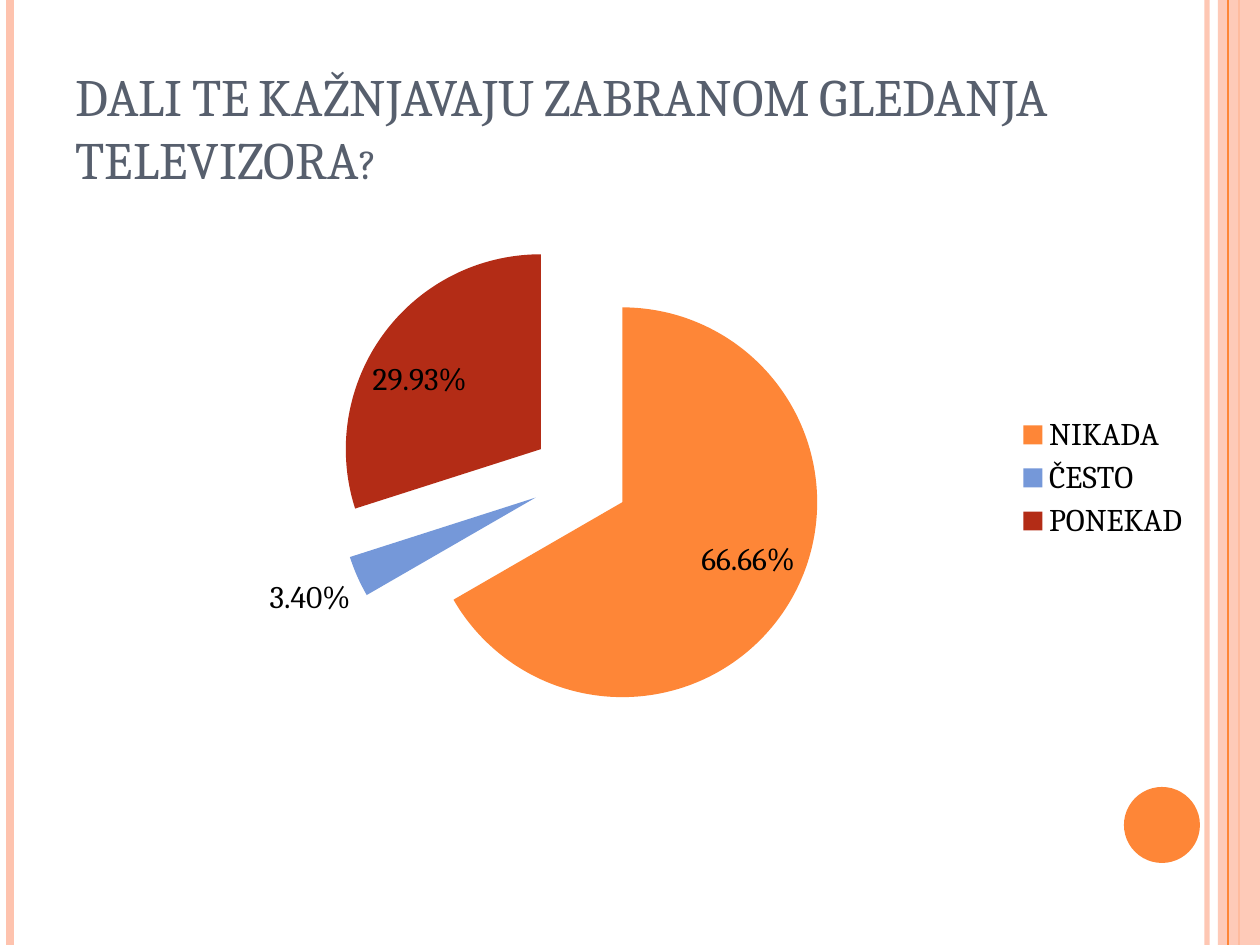
from lxml import etree
from pptx import Presentation
from pptx import util as u
from pptx.chart.data import CategoryChartData
from pptx.dml.color import RGBColor
from pptx.enum import chart as ch, shapes, text
from pptx.oxml.ns import qn

EMU_PER_PX = 914400 / 126
WIDTH, HEIGHT = 1260, 945
FONT = "Cambria"
ORANGE = RGBColor(0xFE, 0x86, 0x37)
PEACH = RGBColor(0xFE, 0xC3, 0xAE)
BLUE = RGBColor(0x75, 0x98, 0xD9)
RED = RGBColor(0xB3, 0x2C, 0x16)
SLATE = RGBColor(0x57, 0x5F, 0x6D)
BLACK = RGBColor(0, 0, 0)

TITLE = "DALI TE KAŽNJAVAJU ZABRANOM GLEDANJA TELEVIZORA?"
ANSWERS = [("NIKADA", 0.6666, ORANGE), ("ČESTO", 0.034, BLUE), ("PONEKAD", 0.2993, RED)]


def px(n):
    return u.Emu(round(n * EMU_PER_PX))


def box(*lengths):
    return [px(n) for n in lengths]


def set_all(obj, values):
    for name, value in values.items():
        setattr(obj, name, value)


def set_opacity(fill_parent, percent):
    color = fill_parent.find(".//" + qn("a:srgbClr"))
    etree.SubElement(color, qn("a:alpha"), val=str(percent * 1000))


def add_rule(s, x, color, width, opacity=100):
    """Add a vertical line over the full height of the slide."""
    line = s.shapes.add_connector(shapes.MSO_CONNECTOR.STRAIGHT, *box(x, 0, x, HEIGHT))
    line.line.color.rgb = color
    line.line.width = u.Pt(width)
    sp_pr = line._element.spPr
    if opacity < 100:
        set_opacity(sp_pr, opacity)
    etree.SubElement(sp_pr, qn("a:effectLst"))


def add_filled(s, kind, bounds, color, opacity=100):
    sp = s.shapes.add_shape(kind, *box(*bounds))
    sp.shadow.inherit = False
    sp.fill.solid()
    sp.fill.fore_color.rgb = color
    sp.line.fill.background()
    if opacity < 100:
        set_opacity(sp._element.spPr, opacity)


def set_title(s):
    sp = s.shapes.title
    left, top, width, height = box(63, 38, 1029, 158)
    set_all(sp, {"left": left, "top": top, "width": width, "height": height})
    tf = sp.text_frame
    set_all(tf, {"word_wrap": True, "auto_size": text.MSO_AUTO_SIZE.NONE,
                 "vertical_anchor": text.MSO_ANCHOR.BOTTOM})
    p = tf.paragraphs[0]
    p.alignment = text.PP_ALIGN.LEFT
    r = p.add_run()
    r.text = TITLE
    set_all(r.font, {"name": FONT, "size": u.Pt(30)})
    r.font.color.rgb = SLATE
    r.font._element.set("cap", "small")


def add_pie(s):
    data = CategoryChartData(number_format="0.00%")
    data.categories = [name for name, _, _ in ANSWERS]
    data.add_series("Series 1", [value for _, value, _ in ANSWERS])
    chart = s.shapes.add_chart(ch.XL_CHART_TYPE.PIE, *box(69, 217, 1134, 522), data).chart
    set_all(chart, {"has_title": False, "has_legend": True})
    set_all(chart.font, {"name": FONT, "size": u.Pt(18)})
    chart.font.color.rgb = BLACK
    set_all(chart.legend, {"position": ch.XL_LEGEND_POSITION.RIGHT,
                           "include_in_layout": False})

    plot = chart.plots[0]
    plot.vary_by_categories = True
    series = plot.series[0]
    explosion = etree.Element(qn("c:explosion"), val="25")
    series._element.find(qn("c:tx")).addnext(explosion)
    for i, (_, _, color) in enumerate(ANSWERS):
        fill = series.points[i].format.fill
        fill.solid()
        fill.fore_color.rgb = color
    set_all(series.data_labels, {
        "show_value": True, "show_percentage": False, "number_format": "0.00%",
        "number_format_is_linked": False, "position": ch.XL_LABEL_POSITION.BEST_FIT})


def main():
    prs = Presentation()
    set_all(prs, {"slide_width": px(WIDTH), "slide_height": px(HEIGHT)})
    s = prs.slides.add_slide(prs.slide_layouts[5])
    add_rule(s, 1207, PEACH, 3, opacity=93)
    add_rule(s, 10, PEACH, 4.5)
    add_rule(s, 1239, ORANGE, 1.5)
    add_filled(s, shapes.MSO_SHAPE.RECTANGLE, (1218, 0, 42, HEIGHT), PEACH, opacity=87)
    add_rule(s, 1228, ORANGE, 0.75)
    add_filled(s, shapes.MSO_SHAPE.OVAL, (1124, 787, 76, 76), ORANGE)
    set_title(s)
    add_pie(s)
    prs.save("out.pptx")


if __name__ == "__main__":
    main()
